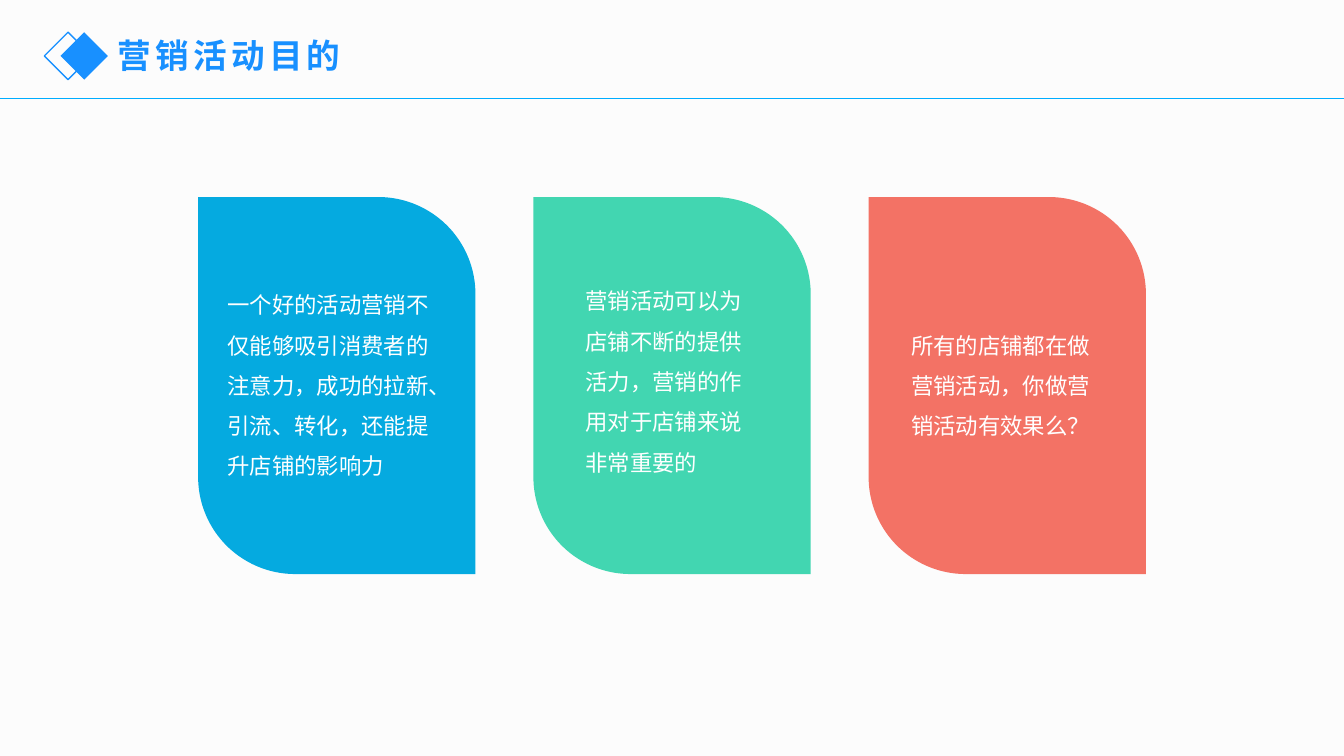
"""Build the slide on the purpose of marketing activities."""
from dataclasses import dataclass

from lxml.etree import SubElement
from pptx import Presentation
from pptx.dml.color import RGBColor
from pptx.enum.shapes import MSO_CONNECTOR, MSO_SHAPE
from pptx.enum.text import MSO_ANCHOR, MSO_AUTO_SIZE, PP_ALIGN
from pptx.oxml.ns import qn
from pptx.shapes.autoshape import Shape
from pptx.slide import Slide
from pptx.util import Inches, Pt

FONT = "Noto Sans CJK SC"
BLUE = "1890FF"
CARD_FIRST, CARD_LAST = 1.47, 8.12
CARD_TOP, CARD_LENGTH, CARD_BREADTH = 2.45, 3.74, 2.75


@dataclass
class Card:
    fill: str
    text: str
    text_box: tuple[float, float, float, float]


@dataclass
class Diamond:
    left: float
    fill: str | None = None
    outline: str | None = None


CARDS = [
    Card("05AAE0", "一个好的活动营销不仅能够吸引消费者的注意力，成功的拉新、引流、转化，还能提升店铺的影响力",
         (2.16, 2.71, 2.37, 2.06)),
    Card("42D6B1", "营销活动可以为店铺不断的提供活力，营销的作用对于店铺来说非常重要的",
         (5.71, 2.67, 1.91, 2.48)),
    Card("F37265", "所有的店铺都在做营销活动，你做营销活动有效果么？",
         (8.94, 3.11, 2.09, 1.25)),
]
DIAMONDS = [Diamond(0.44, outline=BLUE), Diamond(0.6, fill=BLUE)]


def rgb(value: str) -> RGBColor:
    return RGBColor.from_string(value)


def write(holder: Shape, text: str, *, size: float, color: str, bold: bool = False,
          spacing: float = 0, line_spacing: float = 1.0) -> None:
    frame = holder.text_frame
    frame.word_wrap = True
    frame.auto_size = MSO_AUTO_SIZE.SHAPE_TO_FIT_TEXT
    frame.vertical_anchor = MSO_ANCHOR.TOP
    paragraph = frame.paragraphs[0]
    paragraph.alignment = PP_ALIGN.LEFT
    paragraph.line_spacing = line_spacing
    paragraph.space_before = Pt(0)
    run = paragraph.add_run()
    run.text = text
    run.font.size = Pt(size)
    run.font.bold = bold
    run.font.color.rgb = rgb(color)
    run.font.name = FONT
    properties = run.font._element
    SubElement(properties, qn("a:ea")).set("typeface", FONT)
    if spacing:
        properties.set("spc", str(round(spacing * 100)))


def add_figure(slide: Slide, preset: MSO_SHAPE, box: tuple[float, float, float, float],
               fill: str | None = None, outline: str | None = None) -> Shape:
    figure = slide.shapes.add_shape(preset, *map(Inches, box))
    figure.shadow.inherit = False
    if fill:
        figure.fill.solid()
        figure.fill.fore_color.rgb = rgb(fill)
    else:
        figure.fill.background()
    if outline:
        figure.line.color.rgb = rgb(outline)
        figure.line.width = Pt(1)
    else:
        figure.line.fill.background()
    return figure


def add_header(slide: Slide, text: str) -> None:
    rule = slide.shapes.add_connector(
        MSO_CONNECTOR.STRAIGHT, Inches(0), Inches(0.98), Inches(13.33), Inches(0.98))
    rule.line.color.rgb = rgb("00ADFF")
    rule.line.width = Pt(1)
    SubElement(rule._element.spPr, qn("a:effectLst"))
    for diamond in DIAMONDS:
        add_figure(slide, MSO_SHAPE.DIAMOND, (diamond.left, 0.32, 0.47, 0.47),
                   diamond.fill, diamond.outline)
    heading = slide.shapes.title
    heading.left, heading.top = Inches(1.07), Inches(0.3)
    heading.width, heading.height = Inches(5.49), Inches(0.5)
    write(heading, text, size=24, color=BLUE, bold=True, spacing=3)


def add_card(slide: Slide, card: Card, left: float) -> None:
    leaf = add_figure(slide, MSO_SHAPE.ROUND_2_DIAG_RECTANGLE,
                      (left, CARD_TOP, CARD_LENGTH, CARD_BREADTH), card.fill)
    leaf.rotation = 90
    leaf.adjustments[0] = 0.35
    leaf.adjustments[1] = 0
    message = slide.shapes.add_textbox(*map(Inches, card.text_box))
    write(message, card.text, size=16, color="FFFFFF", line_spacing=1.5)


def main() -> None:
    deck = Presentation()
    deck.slide_width, deck.slide_height = Inches(13.33), Inches(7.5)
    slide = deck.slides.add_slide(deck.slide_layouts.get_by_name("Title Only"))
    slide.background.fill.solid()
    slide.background.fill.fore_color.rgb = rgb("FCFCFC")
    add_header(slide, "营销活动目的")
    pitch = (CARD_LAST - CARD_FIRST) / (len(CARDS) - 1)
    for index, card in enumerate(CARDS):
        add_card(slide, card, CARD_FIRST + index * pitch)
    deck.save("out.pptx")


if __name__ == "__main__":
    main()
